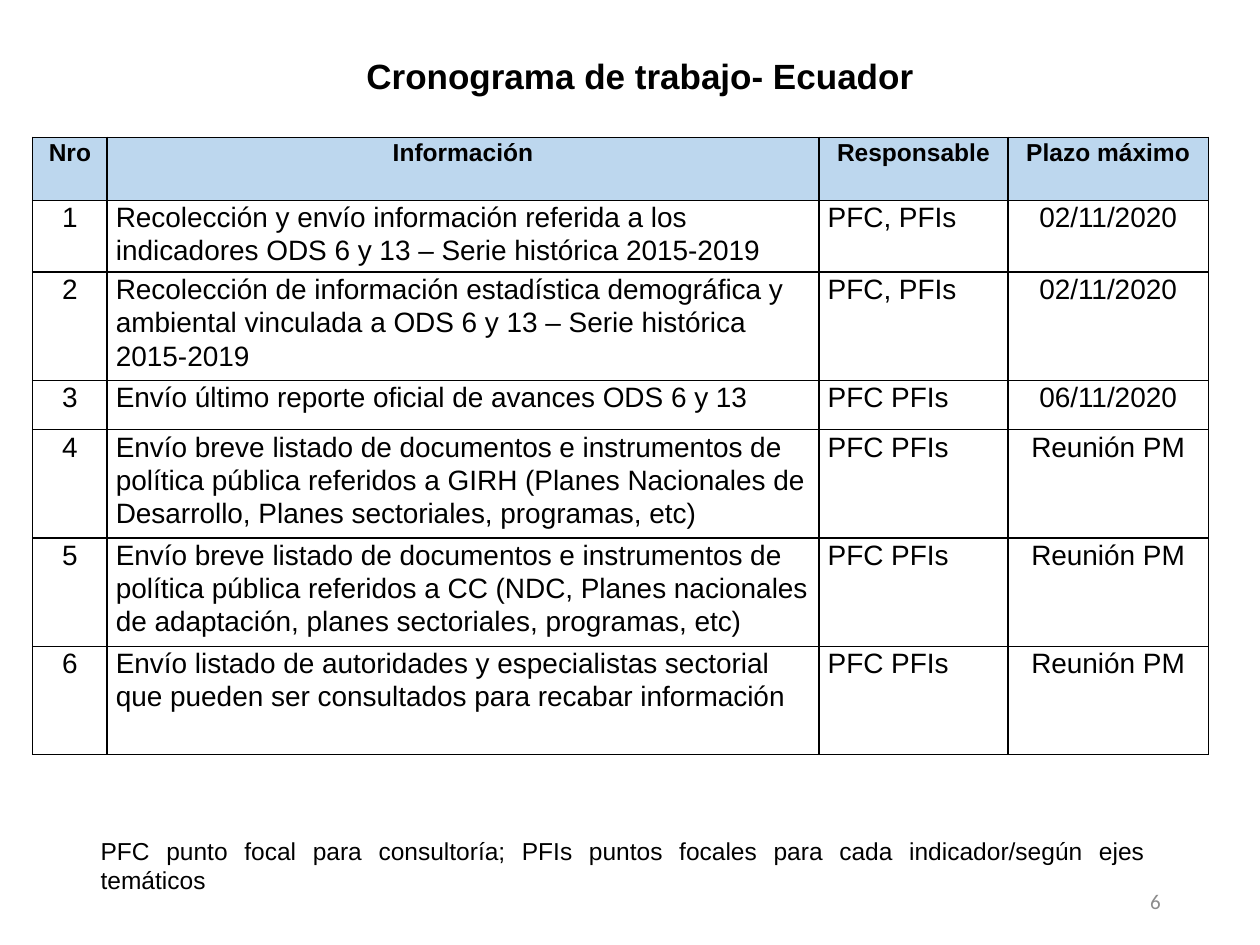
from lxml import etree
from pptx import Presentation
from pptx import util as u
from pptx.dml.color import RGBColor
from pptx.enum import text
from pptx.oxml import ns

TITLE = "Cronograma de trabajo- Ecuador"
HEADERS = ("Nro", "Información", "Responsable", "Plazo máximo")
TASKS = [
    ("Recolección y envío información referida a los indicadores ODS 6 y 13 "
     "– Serie histórica 2015-2019", "PFC, PFIs", "02/11/2020"),
    ("Recolección de información estadística demográfica y ambiental vinculada "
     "a ODS 6 y 13 – Serie histórica 2015-2019", "PFC, PFIs", "02/11/2020"),
    ("Envío último reporte oficial de avances ODS 6 y 13", "PFC PFIs", "06/11/2020"),
    ("Envío breve listado de documentos e instrumentos de política pública "
     "referidos a GIRH (Planes Nacionales de Desarrollo, Planes sectoriales, "
     "programas, etc)", "PFC PFIs", "Reunión PM"),
    ("Envío breve listado de documentos e instrumentos de política pública "
     "referidos a CC (NDC, Planes nacionales de adaptación, planes sectoriales, "
     "programas, etc)", "PFC PFIs", "Reunión PM"),
    ("Envío listado de autoridades y especialistas sectorial que pueden ser "
     "consultados para recabar información", "PFC PFIs", "Reunión PM"),
]
NOTE = ("PFC punto focal para consultoría; PFIs puntos focales para cada "
        "indicador/según ejes temáticos")
PAGE_NUMBER = "6"

COLUMN_WIDTHS = (0.59, 5.65, 1.5, 1.59)
ROW_HEIGHTS = (0.5, 0.57, 0.86, 0.39, 0.86, 0.86, 0.86)
TABLE_LEFT, TABLE_TOP = 0.26, 1.09


class Theme:
    font, number_font = "Arial", "Calibri"
    ink, muted, header_fill = "000000", "8C8C8C", "BDD7EE"
    title, header, body, note, number = 20, 14, 16, 14, 12
    border = 1
    line_spacing = 1.07


ALIGN = text.PP_ALIGN
ANCHOR = text.MSO_ANCHOR
COLUMN_ALIGNMENTS = (ALIGN.CENTER, ALIGN.LEFT, ALIGN.LEFT, ALIGN.CENTER)


def style_paragraph(paragraph, size, alignment, bold=False,
                    color=Theme.ink, font=Theme.font):
    paragraph.alignment = alignment
    paragraph.font.size = u.Pt(size)
    paragraph.font.bold = bold
    paragraph.font.name = font
    paragraph.font.color.rgb = RGBColor.from_string(color)


def add_label(slide, words, box, size, alignment, anchor=ANCHOR.MIDDLE, **style):
    label = slide.shapes.add_textbox(*(u.Inches(value) for value in box))
    frame = label.text_frame
    frame.word_wrap = True
    frame.vertical_anchor = anchor
    frame.text = words
    style_paragraph(frame.paragraphs[0], size, alignment, **style)


def add_borders(cell):
    """Outline all four sides; border lines must come before the cell fill."""
    properties = cell._tc.get_or_add_tcPr()
    for position, side in enumerate(("a:lnL", "a:lnR", "a:lnT", "a:lnB")):
        line = etree.Element(ns.qn(side), w=str(u.Pt(Theme.border)))
        fill = etree.SubElement(line, ns.qn("a:solidFill"))
        etree.SubElement(fill, ns.qn("a:srgbClr"), val=Theme.ink)
        properties.insert(position, line)


def fill_cell(cell, words, alignment, is_header):
    cell.margin_left = cell.margin_right = u.Inches(0.07)
    cell.margin_top = cell.margin_bottom = 0
    cell.text = words
    paragraph = cell.text_frame.paragraphs[0]
    paragraph.line_spacing = Theme.line_spacing
    style_paragraph(paragraph, Theme.header if is_header else Theme.body,
                    ALIGN.CENTER if is_header else alignment, bold=is_header)
    if is_header:
        cell.fill.solid()
        cell.fill.fore_color.rgb = RGBColor.from_string(Theme.header_fill)
    else:
        cell.fill.background()
    add_borders(cell)


def add_schedule(slide):
    rows = [HEADERS] + [(str(number), *task) for number, task in enumerate(TASKS, 1)]
    table = slide.shapes.add_table(
        len(rows), len(HEADERS), u.Inches(TABLE_LEFT), u.Inches(TABLE_TOP),
        u.Inches(sum(COLUMN_WIDTHS)), u.Inches(sum(ROW_HEIGHTS))).table
    table.horz_banding = False
    for column, width in zip(table.columns, COLUMN_WIDTHS):
        column.width = u.Inches(width)
    for row_index, (values, height) in enumerate(zip(rows, ROW_HEIGHTS)):
        table.rows[row_index].height = u.Inches(height)
        for column_index, (words, alignment) in enumerate(zip(values, COLUMN_ALIGNMENTS)):
            fill_cell(table.cell(row_index, column_index), words, alignment,
                      row_index == 0)


def main():
    presentation = Presentation()
    presentation.slide_width = u.Inches(10)
    presentation.slide_height = u.Inches(7.5)
    slide = presentation.slides.add_slide(presentation.slide_layouts[6])
    add_label(slide, TITLE, (0.77, 0.38, 8.62, 0.44), Theme.title, ALIGN.CENTER,
              anchor=ANCHOR.TOP, bold=True)
    add_label(slide, PAGE_NUMBER, (7.06, 6.95, 2.25, 0.4), Theme.number, ALIGN.RIGHT,
              color=Theme.muted, font=Theme.number_font)
    add_schedule(slide)
    add_label(slide, NOTE, (0.7, 6.58, 8.49, 0.57), Theme.note, ALIGN.JUSTIFY)
    presentation.save("out.pptx")


if __name__ == "__main__":
    main()
